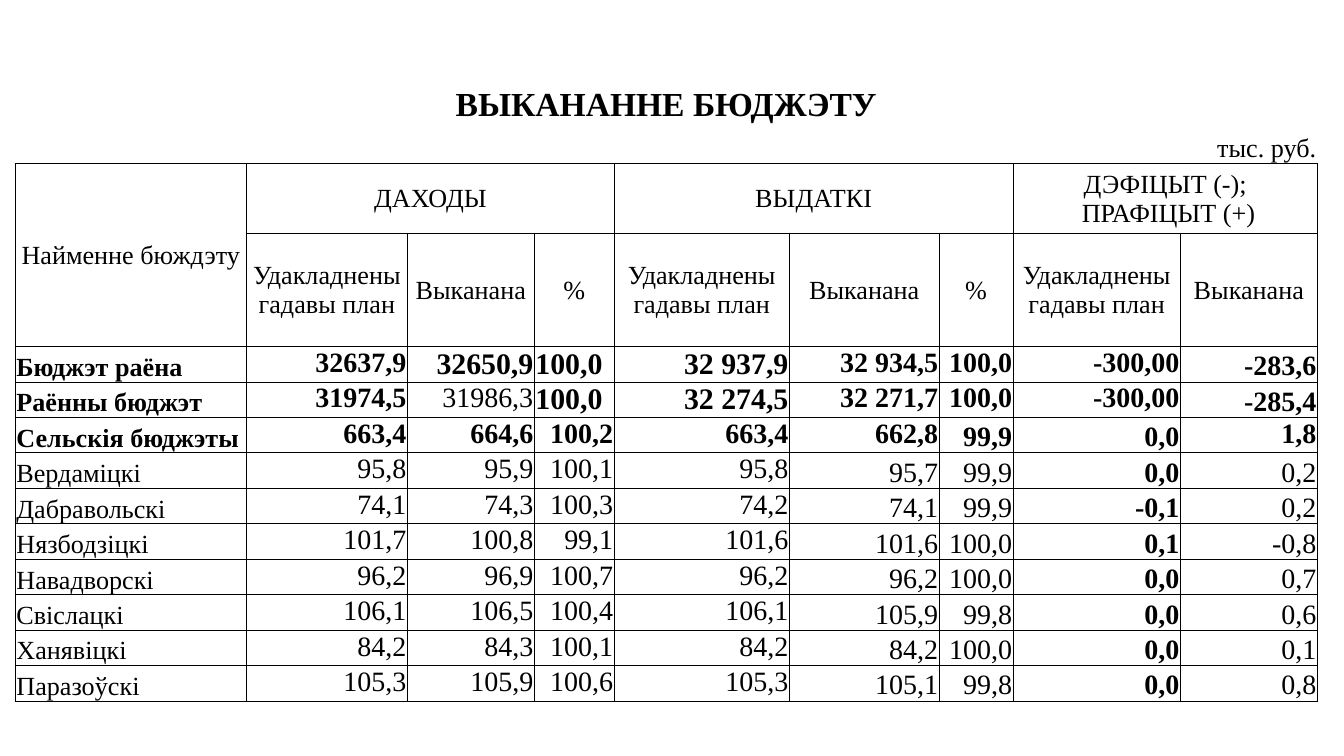
"""Build a one-slide presentation with the budget execution table."""
from lxml.etree import SubElement
from pptx import Presentation
from pptx.dml.color import RGBColor
from pptx.enum.text import MSO_ANCHOR, PP_ALIGN
from pptx.oxml.ns import qn
from pptx.util import Cm, Pt

COLORS = {"text": "000000", "border": "000000"}
COLUMN_WIDTHS = [4.37, 2.55, 0.49, 1.78, 0.62, 1.51, 3.31, 2.27, 0.56, 1.4, 3.16, 0.31, 2.28]
BUDGET_ROW_HEIGHT = 0.67
FIELD_SPANS = [(0, 1), (1, 2), (3, 2), (5, 1), (6, 1), (7, 2), (9, 1), (10, 1), (11, 2)]
UNIT_ROW_MERGES = [2, 4, 8, 10]
GROUPS = [(1, 5, "ДАХОДЫ"), (6, 4, "ВЫДАТКІ"), (10, 3, "ДЭФІЦЫТ (-);\n ПРАФІЦЫТ (+)")]
PLAN, DONE = "Удакладнены гадавы план", "Выканана"
FIELDS = [PLAN, DONE, "%", PLAN, DONE, "%", PLAN, DONE]
BUDGETS = [
    ["Бюджэт раёна", "32637,9", "32650,9", "100,0", "32 937,9", "32 934,5", "100,0", "-300,00", "-283,6"],
    ["Раённы бюджэт", "31974,5", "31986,3", "100,0", "32 274,5", "32 271,7", "100,0", "-300,00", "-285,4"],
    ["Сельскія бюджэты", "663,4", "664,6", "100,2", "663,4", "662,8", "99,9", "0,0", "1,8"],
    ["Вердаміцкі", "95,8", "95,9", "100,1", "95,8", "95,7", "99,9", "0,0", "0,2"],
    ["Дабравольскі", "74,1", "74,3", "100,3", "74,2", "74,1", "99,9", "-0,1", "0,2"],
    ["Нязбодзіцкі", "101,7", "100,8", "99,1", "101,6", "101,6", "100,0", "0,1", "-0,8"],
    ["Навадворскі", "96,2", "96,9", "100,7", "96,2", "96,2", "100,0", "0,0", "0,7"],
    ["Свіслацкі", "106,1", "106,5", "100,4", "106,1", "105,9", "99,8", "0,0", "0,6"],
    ["Ханявіцкі", "84,2", "84,3", "100,1", "84,2", "84,2", "100,0", "0,0", "0,1"],
    ["Паразоўскі", "105,3", "105,9", "100,6", "105,3", "105,1", "99,8", "0,0", "0,8"],
]
ROW_HEIGHTS = [0.86, 0.68, 1.32, 2.14] + [BUDGET_ROW_HEIGHT] * len(BUDGETS)
TOTAL_ROWS = 3
LARGE_FIELDS = {(0, 2), (0, 3), (0, 4), (1, 3), (1, 4)}
LEFT_FIELDS = {(0, 3), (1, 3)}
PLAIN_TOTALS = {(1, 2)}
BOTTOM_FIELDS = [{0, 8}, {0, 8}, {0, 6, 7}] + [{0, 5, 6, 7, 8}] * (len(BUDGETS) - TOTAL_ROWS)


class BudgetSlide:
    """Holds the style, the slide and its table."""

    font = "Times New Roman"

    def __init__(self, presentation):
        self.slide = presentation.slides.add_slide(presentation.slide_layouts[6])
        self.table = None

    def add_table(self, left, top, row_heights, column_widths):
        frame = self.slide.shapes.add_table(
            len(row_heights), len(column_widths), Cm(left), Cm(top),
            Cm(sum(column_widths)), Cm(sum(row_heights)))
        self.table = frame.table
        self.table.first_row = self.table.horz_banding = False
        for row, height in zip(self.table.rows, row_heights):
            row.height = Cm(height)
        for column, width in zip(self.table.columns, column_widths):
            column.width = Cm(width)
        for index, row in enumerate(self.table.rows):
            sides = ["", "B"][index] if index < 2 else "LRTB"
            for cell in row.cells:
                self.format_cell(cell, sides)

    def format_cell(self, cell, sides):
        cell.margin_left = cell.margin_right = cell.margin_top = Cm(0.02)
        cell.margin_bottom = 0
        properties = cell._tc.get_or_add_tcPr()
        for side in sides:
            line = SubElement(properties, qn(f"a:ln{side}"), w=str(Pt(0.5)))
            fill = SubElement(line, qn("a:solidFill"))
            SubElement(fill, qn("a:srgbClr"), val=COLORS["border"])
        cell.fill.background()
        end = SubElement(cell.text_frame.paragraphs[0]._p, qn("a:endParaRPr"))
        end.set("sz", "1000")

    def merge(self, row, column, width=1, height=1):
        cell = self.table.cell(row, column)
        if width * height > 1:
            cell.merge(self.table.cell(row + height - 1, column + width - 1))
        return cell

    def set_text(self, cell, text, size=14, bold=False,
                 align=PP_ALIGN.CENTER, anchor=MSO_ANCHOR.MIDDLE):
        cell.text_frame.text = text
        cell.vertical_anchor = anchor
        for paragraph in cell.text_frame.paragraphs:
            paragraph.alignment = align
            for run in paragraph.runs:
                run.font.name = self.font
                run.font.size = Pt(size)
                run.font.bold = bold
                run.font.color.rgb = RGBColor.from_string(COLORS["text"])

    def add_headings(self):
        self.set_text(self.merge(0, 0, len(COLUMN_WIDTHS)), "ВЫКАНАННЕ БЮДЖЭТУ", 18, True)
        for column in UNIT_ROW_MERGES:
            self.merge(1, column, 2)
        self.set_text(self.table.cell(1, 12), "тыс. руб.",
                      align=PP_ALIGN.RIGHT, anchor=MSO_ANCHOR.BOTTOM)
        self.set_text(self.merge(2, 0, height=2), "Найменне бюждэту")
        for column, width, text in GROUPS:
            self.set_text(self.merge(2, column, width), text)
        for (column, width), text in zip(FIELD_SPANS[1:], FIELDS):
            self.set_text(self.merge(3, column, width), text)

    def add_budget(self, index, values):
        for field, ((column, width), text) in enumerate(zip(FIELD_SPANS, values)):
            place = (index, field)
            size = 14 if field == 0 else 16 if place in LARGE_FIELDS else 15
            bold = (index < TOTAL_ROWS or field == 7) and place not in PLAIN_TOTALS
            is_left = field == 0 or place in LEFT_FIELDS
            is_bottom = field in BOTTOM_FIELDS[index]
            self.set_text(self.merge(index + 4, column, width), text, size, bold,
                          PP_ALIGN.LEFT if is_left else PP_ALIGN.RIGHT,
                          MSO_ANCHOR.BOTTOM if is_bottom else MSO_ANCHOR.TOP)


def main():
    presentation = Presentation()
    presentation.slide_width, presentation.slide_height = Cm(25.4), Cm(14.29)
    budget_slide = BudgetSlide(presentation)
    budget_slide.add_table(0.29, 1.55, ROW_HEIGHTS, COLUMN_WIDTHS)
    budget_slide.add_headings()
    for index, values in enumerate(BUDGETS):
        budget_slide.add_budget(index, values)
    presentation.save("out.pptx")


if __name__ == "__main__":
    main()
